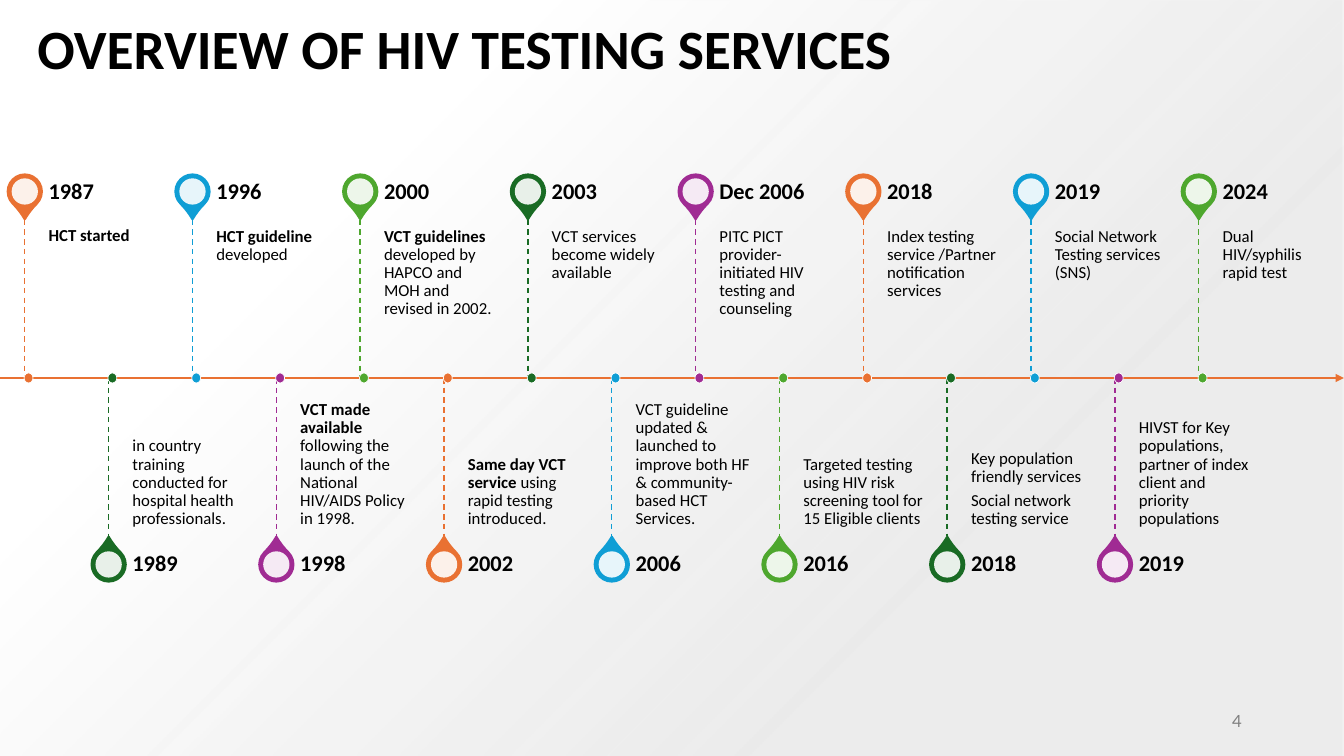
"""Build a one-slide timeline of HIV testing services."""
from lxml import etree
from pptx import Presentation
from pptx import util as u
from pptx.dml.color import RGBColor
from pptx.enum import dml, shapes, text as t
from pptx.oxml import ns, parse_xml

TITLE = "OVERVIEW OF HIV TESTING SERVICES"
PAGE_NUMBER = "4"
MILESTONES = [
    ("1987", [("HCT started", "")]),
    ("1989", [("", "in country training conducted for hospital health professionals.")]),
    ("1996", [("HCT guideline ", "developed")]),
    ("1998", [("VCT made available ",
               "following the launch of the National HIV/AIDS Policy in 1998.")]),
    ("2000", [("VCT guidelines ", "developed by HAPCO and MOH and revised in 2002.")]),
    ("2002", [("Same day VCT service ", "using rapid testing introduced.")]),
    ("2003", [("", "VCT services become widely available")]),
    ("2006", [("", "VCT guideline updated & launched to improve both HF & "
                   "community-based HCT Services.")]),
    ("Dec 2006", [("", "PITC PICT provider-initiated HIV testing and counseling")]),
    ("2016", [("", "Targeted testing using HIV risk screening tool for 15 Eligible clients")]),
    ("2018", [("", "Index testing service /Partner notification services")]),
    ("2018", [("", "Key population friendly services"),
              ("", "Social network testing service")]),
    ("2019", [("", "Social Network Testing services (SNS)")]),
    ("2019", [("", "HIVST for Key populations, partner of index client and "
                   "priority populations")]),
    ("2024", [("", "Dual HIV/syphilis rapid test")]),
]

BLACK = RGBColor(0x00, 0x00, 0x00)
WHITE = RGBColor(0xFF, 0xFF, 0xFF)
GRAY = RGBColor(0x80, 0x80, 0x80)
ORANGE = RGBColor(0xE9, 0x71, 0x32)
DARK_GREEN = RGBColor(0x19, 0x6B, 0x24)
BLUE = RGBColor(0x0F, 0x9E, 0xD5)
PURPLE = RGBColor(0xA0, 0x2B, 0x93)
GREEN = RGBColor(0x4E, 0xA7, 0x2E)
CYCLE = [ORANGE, DARK_GREEN, BLUE, PURPLE, GREEN]

WIDTH, HEIGHT = 960, 540
AXIS_Y = 270
FIRST_X, PITCH = 17.7, 59.9
STEM, PIN_OFFSET = 113, 133.2
PIN, HOLE = 24.4, 18.8
DOT_WIDTH, DOT_HEIGHT = 6.4, 7.2
TEXT_GAP, TEXT_WIDTH, YEAR_HEIGHT = 17, 85.7, 39.6

BACKDROP = (
    f'<a:gradFill {ns.nsdecls("a")} rotWithShape="1"><a:gsLst>'
    '<a:gs pos="28000"><a:srgbClr val="E8E8E8"><a:alpha val="84000"/></a:srgbClr></a:gs>'
    '<a:gs pos="74000"><a:srgbClr val="FFFFFF"/></a:gs></a:gsLst>'
    '<a:path path="circle"><a:fillToRect l="100000" t="100000"/></a:path></a:gradFill>'
)


def add_text(slide, box, content, *, size, font="Calibri", color=BLACK, bold=False,
             align=t.PP_ALIGN.LEFT, anchor=t.MSO_ANCHOR.MIDDLE,
             insets=(0, 0, 0, 0), line_spacing=0.9, space_after=0):
    """Add a text box from a string or a list of (bold, regular) paragraphs."""
    frame = slide.shapes.add_textbox(*map(u.Pt, box)).text_frame
    frame.word_wrap = True
    frame.vertical_anchor = anchor
    (frame.margin_left, frame.margin_top,
     frame.margin_right, frame.margin_bottom) = map(u.Pt, insets)
    if isinstance(content, str):
        content = [(content, "") if bold else ("", content)]
    for index, parts in enumerate(content):
        paragraph = frame.add_paragraph() if index else frame.paragraphs[0]
        paragraph.alignment = align
        paragraph.line_spacing = line_spacing
        paragraph.space_after = u.Pt(space_after)
        for words, is_bold in zip(parts, (True, False)):
            if words:
                run = paragraph.add_run()
                run.text = words
                run.font.name = font
                run.font.size = u.Pt(size)
                run.font.bold = is_bold
                run.font.color.rgb = color


def add_centered(slide, kind, x, y, width, height, fill, line=None, line_width=0):
    """Add a filled shape around a centre point."""
    shape = slide.shapes.add_shape(
        kind, *map(u.Pt, (x - width / 2, y - height / 2, width, height)))
    shape.shadow.inherit = False
    shape.fill.solid()
    shape.fill.fore_color.rgb = fill
    if line is None:
        shape.line.fill.background()
    else:
        shape.line.color.rgb = line
        shape.line.width = u.Pt(line_width)
    return shape


def add_line(slide, start, end, color, width):
    """Add a straight line without shadow."""
    line = slide.shapes.add_connector(
        shapes.MSO_CONNECTOR.STRAIGHT, *map(u.Pt, (*start, *end)))
    line.line.color.rgb = color
    line.line.width = u.Pt(width)
    etree.SubElement(line.element.spPr, ns.qn("a:effectLst"))
    return line


def add_milestone(slide, index, year, details):
    """Add one pin with its year, details, stem and dot on the axis."""
    above = index % 2 == 0
    side = -1 if above else 1
    color = CYCLE[index % len(CYCLE)]
    x = FIRST_X + index * PITCH
    pin_y = AXIS_Y + side * PIN_OFFSET
    stem_y = AXIS_Y + side * STEM
    text_x = x + TEXT_GAP

    pin = add_centered(slide, shapes.MSO_SHAPE.TEAR, x, pin_y, PIN, PIN, color, color, 1.5)
    pin.adjustments[0] = 1.15
    pin.rotation = 135 if above else 315
    hole = add_centered(slide, shapes.MSO_SHAPE.OVAL, x, pin_y, HOLE, HOLE, WHITE)
    white = hole.element.spPr.find(".//" + ns.qn("a:srgbClr"))
    etree.SubElement(white, ns.qn("a:alpha"), val="90000")

    add_text(slide, (text_x, min(AXIS_Y, stem_y), TEXT_WIDTH, STEM), details,
             size=12, space_after=4.2,
             anchor=t.MSO_ANCHOR.TOP if above else t.MSO_ANCHOR.BOTTOM,
             insets=(0, 5.76, 5.76, 8.64) if above else (0, 8.64, 0, 5.76))
    year_y = stem_y - YEAR_HEIGHT if above else stem_y
    add_text(slide, (text_x, year_y, TEXT_WIDTH, YEAR_HEIGHT), year,
             size=16, bold=True, insets=(0, 0, 7.9, 0))

    stem = add_line(slide, (x, min(AXIS_Y, stem_y)), (x, max(AXIS_Y, stem_y)), color, 1)
    stem.line.dash_style = dml.MSO_LINE.DASH
    add_centered(slide, shapes.MSO_SHAPE.OVAL, x + 2.7, AXIS_Y,
                 DOT_WIDTH, DOT_HEIGHT, color, WHITE, 0.5)


def main():
    """Assemble and save the slide."""
    presentation = Presentation()
    presentation.slide_width, presentation.slide_height = u.Pt(WIDTH), u.Pt(HEIGHT)
    slide = presentation.slides.add_slide(presentation.slide_layouts[6])

    backdrop = add_centered(slide, shapes.MSO_SHAPE.RECTANGLE, WIDTH / 2, HEIGHT / 2,
                            WIDTH, HEIGHT, WHITE)
    solid = backdrop.element.spPr.find(ns.qn("a:solidFill"))
    backdrop.element.spPr.replace(solid, parse_xml(BACKDROP))

    add_text(slide, (18, 9.4, 828, 54.7), TITLE, size=39.6, bold=True,
             insets=(8.64, 4.32, 8.64, 4.32))
    add_text(slide, (678.2, 500.4, 216, 28.8), PAGE_NUMBER, size=12, font="Lato",
             color=GRAY, align=t.PP_ALIGN.RIGHT, insets=(7.2, 3.6, 7.2, 3.6),
             line_spacing=1, space_after=6)

    axis = add_line(slide, (0, AXIS_Y), (WIDTH, AXIS_Y), ORANGE, 1.5)
    outline = axis.element.spPr.find(ns.qn("a:ln"))
    etree.SubElement(outline, ns.qn("a:tailEnd"), type="triangle")
    for index, (year, details) in enumerate(MILESTONES):
        add_milestone(slide, index, year, details)
    presentation.save("out.pptx")


if __name__ == "__main__":
    main()
